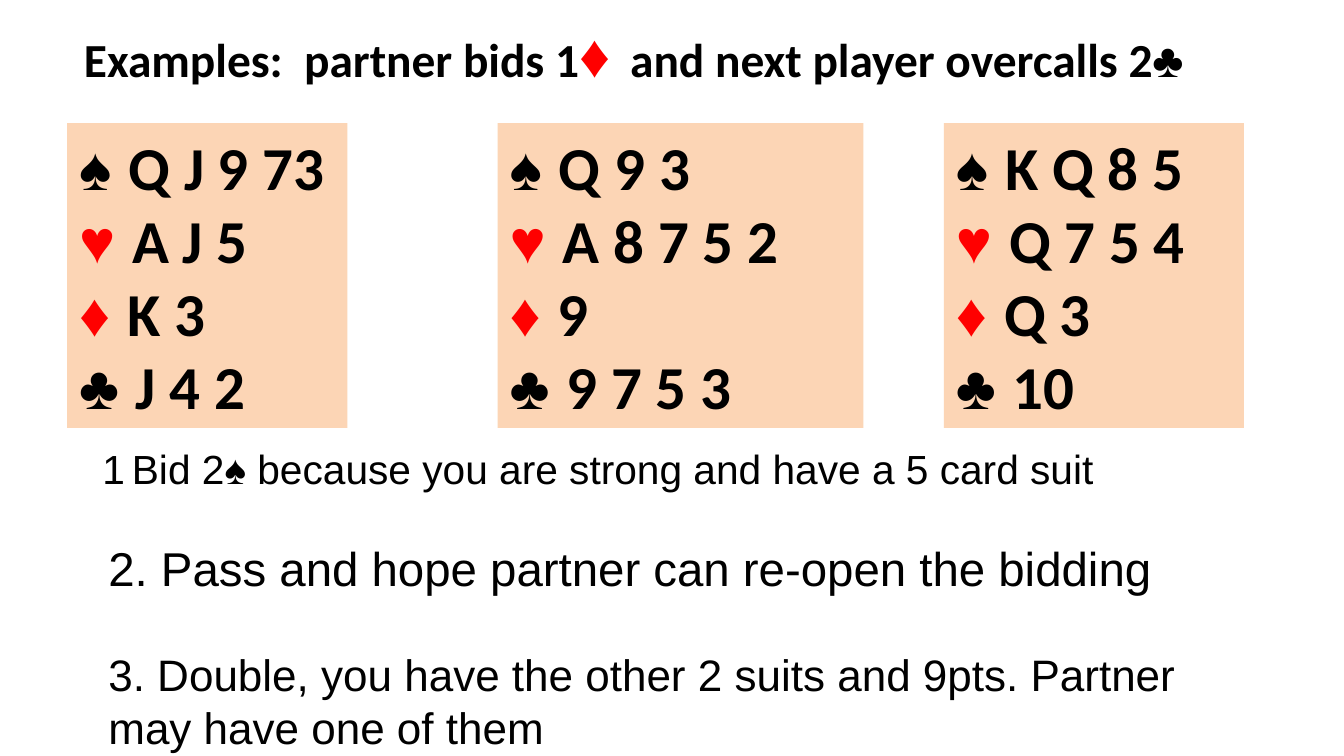
from dataclasses import dataclass

from pptx import Presentation
from pptx.dml.color import RGBColor
from pptx.enum.shapes import MSO_SHAPE
from pptx.enum.text import MSO_ANCHOR, PP_ALIGN
from pptx.util import Inches, Pt


@dataclass(frozen=True)
class Theme:
    black: RGBColor = RGBColor(0, 0, 0)
    red: RGBColor = RGBColor(255, 0, 0)
    card: RGBColor = RGBColor(0xFC, 0xD5, 0xB5)
    text_font: str = "Arial"
    card_font: str = "Calibri"
    title_size: float = 28
    gap_size: float = 26
    card_size: float = 36
    small_gap: float = 14.9


THEME = Theme()
SUITS = (("♠", THEME.black), ("♥", THEME.red),
         ("♦", THEME.red), ("♣", THEME.black))
HANDS = (
    (0.55, 2.3, ("Q J 9 73", "A J 5", "K 3", "J 4 2")),
    (4.08, 3.0, ("Q 9 3", "A 8 7 5 2", "9", "9 7 5 3")),
    (7.74, 2.46, ("K Q 8 5", "Q 7 5 4", "Q 3", "10")),
)


def add_run(paragraph, text, size, font=THEME.text_font,
            color=THEME.black, bold=False, spacing=0):
    run = paragraph.add_run()
    run.text = text
    formats = {"size": Pt(size), "name": font, "bold": bold}
    for name, value in formats.items():
        setattr(run.font, name, value)
    run.font.color.rgb = color
    if spacing:
        run._r.get_or_add_rPr().set("spc", str(round(spacing * 100)))


def prepare_frame(shape):
    formats = {
        "word_wrap": True,
        "vertical_anchor": MSO_ANCHOR.TOP,
        "margin_left": Inches(0.1),
        "margin_right": Inches(0.1),
        "margin_top": Inches(0.05),
        "margin_bottom": Inches(0.05),
    }
    for name, value in formats.items():
        setattr(shape.text_frame, name, value)
    return shape.text_frame


def add_line(slide, left, top, width, height, runs):
    shape = slide.shapes.add_textbox(
        Inches(left), Inches(top), Inches(width), Inches(height))
    paragraph = prepare_frame(shape).paragraphs[0]
    for text, formats in runs:
        add_run(paragraph, text, **formats)


def add_hand(slide, left, width, holdings):
    shape = slide.shapes.add_shape(
        MSO_SHAPE.RECTANGLE, Inches(left), Inches(1.01),
        Inches(width), Inches(2.5))
    shape.shadow.inherit = False
    shape.fill.solid()
    shape.fill.fore_color.rgb = THEME.card
    shape.line.fill.background()
    frame = prepare_frame(shape)
    for index, ((suit, color), cards) in enumerate(zip(SUITS, holdings)):
        paragraph = frame.add_paragraph() if index else frame.paragraphs[0]
        paragraph.alignment = PP_ALIGN.LEFT
        add_run(paragraph, f"{suit} ", THEME.card_size, color=color, bold=True)
        add_run(paragraph, cards, THEME.card_size, THEME.card_font, bold=True)


def add_title(slide):
    words = {"size": THEME.title_size, "font": THEME.card_font, "bold": True}
    symbol = {**words, "font": THEME.text_font}
    add_line(slide, 0.59, 0.09, 9.44, 1.03, (
        ("Examples:", words),
        (" ", {**words, "spacing": 6.3}),
        ("partner bids 1", words),
        ("♦", {**symbol, "size": THEME.card_size, "color": THEME.red}),
        (" ", {**words, "size": THEME.gap_size, "spacing": 5.9}),
        ("and next player overcalls 2", words),
        ("♣", symbol),
    ))


def add_answers(slide):
    add_line(slide, 0.74, 3.59, 9.58, 0.5, (
        ("1", {"size": 24}),
        (" ", {"size": THEME.small_gap}),
        ("Bid 2♠ because you are strong and have a 5 card suit", {"size": 24}),
    ))
    add_line(slide, 0.79, 4.37, 9.44, 0.71, (
        ("2. Pass and hope partner can re-open the bidding", {"size": 28}),
    ))
    add_line(slide, 0.79, 5.26, 9.44, 0.69, (
        ("3. Double, you have the other 2 suits and 9pts. "
         "Partner may have one of them", {"size": 26}),
    ))


def main():
    presentation = Presentation()
    presentation.slide_width = Inches(11.02)
    presentation.slide_height = Inches(6.2)
    slide = presentation.slides.add_slide(presentation.slide_layouts[6])
    add_title(slide)
    for left, width, holdings in HANDS:
        add_hand(slide, left, width, holdings)
    add_answers(slide)
    presentation.save("out.pptx")


if __name__ == "__main__":
    main()
